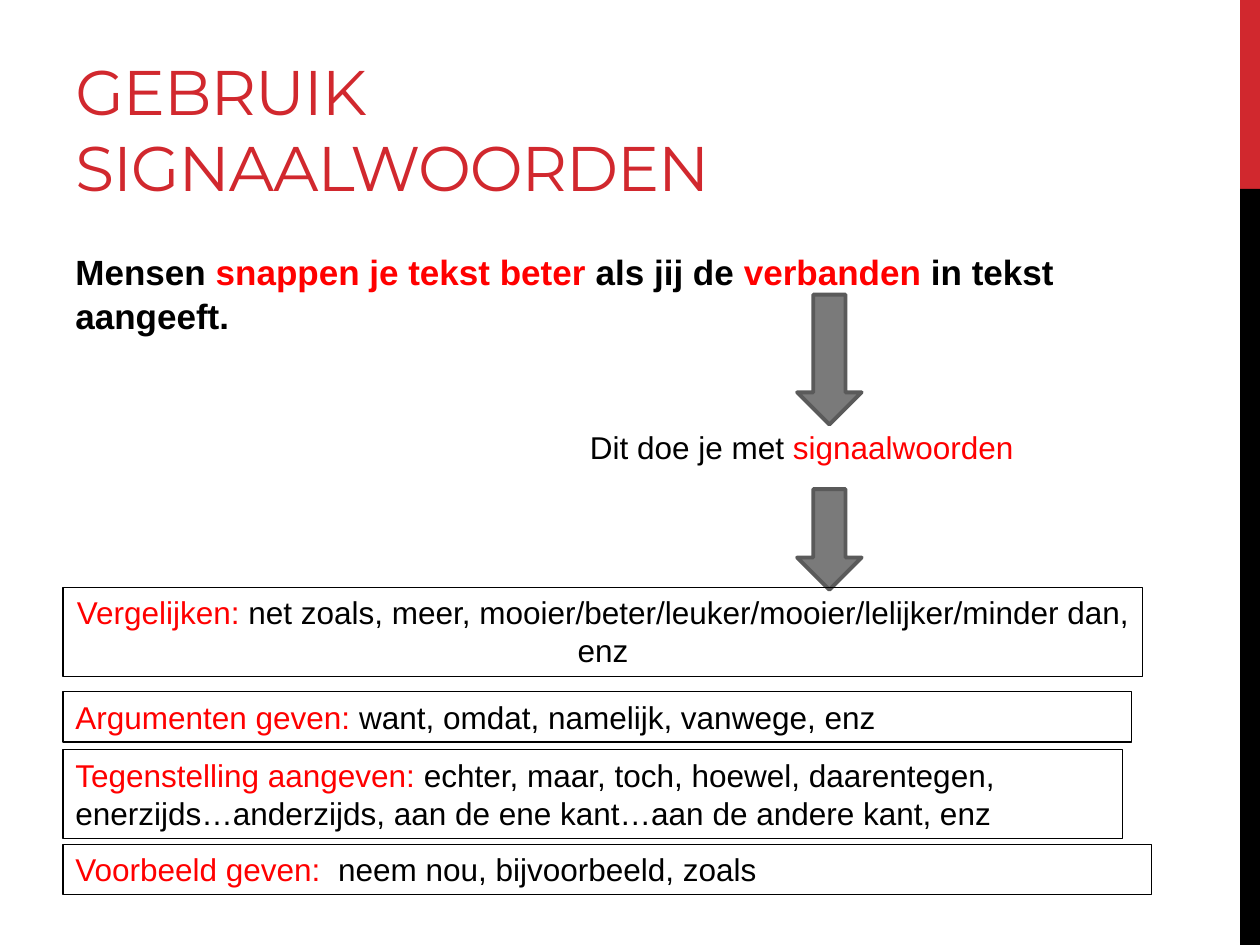
import pptx
import pptx.dml.color
import pptx.enum.shapes
import pptx.enum.text
import pptx.util

Cm = pptx.util.Cm
Pt = pptx.util.Pt
SHAPES = pptx.enum.shapes.MSO_SHAPE
ALIGN = pptx.enum.text.PP_ALIGN
ANCHOR = pptx.enum.text.MSO_ANCHOR

COLORS = {
    "title": "D1282E",
    "text": "000000",
    "accent": "FF0000",
    "arrow": "7A7A7A",
    "arrow_edge": "5A5A5A",
}


def rgb(name):
    return pptx.dml.color.RGBColor.from_string(COLORS[name])


def write(frame, parts, size=18, font="Arial", bold=False, align=ALIGN.LEFT,
          anchor=ANCHOR.TOP, line_spacing=None, tracking=None):
    """Fill a frame with one paragraph of (text, colour name) parts; tracking is in points."""
    frame.word_wrap = True
    frame.vertical_anchor = anchor
    paragraph = frame.paragraphs[0]
    paragraph.alignment = align
    paragraph.line_spacing = line_spacing
    for text, color in parts:
        run = paragraph.add_run()
        run.text = text
        run.font.name = font
        run.font.size = Pt(size)
        run.font.bold = bold
        run.font.color.rgb = rgb(color)
        if tracking is not None:
            run._r.get_or_add_rPr().set("spc", str(round(tracking * 100)))


class SlideBuilder:
    """Holds the slide and draws its elements; all lengths are in centimetres."""

    def __init__(self, slide):
        self.slide = slide

    def shape(self, kind, box, fill=None, edge=None, edge_width=0.75):
        shape = self.slide.shapes.add_shape(kind, *map(Cm, box))
        shape.shadow.inherit = False
        if fill:
            shape.fill.solid()
            shape.fill.fore_color.rgb = rgb(fill)
        else:
            shape.fill.background()
        if edge:
            shape.line.color.rgb = rgb(edge)
            shape.line.width = Pt(edge_width)
        else:
            shape.line.fill.background()
        return shape

    def bar(self, top, height, color):
        self.shape(SHAPES.RECTANGLE, (25, top, 0.4, height), fill=color)

    def arrow(self, top, height):
        self.shape(SHAPES.DOWN_ARROW, (16.07, top, 1.3, height),
                   fill="arrow", edge="arrow_edge", edge_width=2.25)

    def text(self, box, parts, **style):
        textbox = self.slide.shapes.add_textbox(*map(Cm, box))
        write(textbox.text_frame, parts, **style)

    def signal_words(self, top, width, height, relation, words, align=ALIGN.LEFT):
        frame = self.shape(SHAPES.RECTANGLE, (1.27, top, width, height),
                           edge="text").text_frame
        write(frame, [(relation, "accent"), (words, "text")], align=align)


def main():
    presentation = pptx.Presentation()
    presentation.slide_width = Cm(25.4)
    presentation.slide_height = Cm(19.05)
    builder = SlideBuilder(presentation.slides.add_slide(presentation.slide_layouts[6]))

    builder.bar(0, 3.81, "title")
    builder.bar(3.81, 15.24, "text")

    builder.text((1.27, 0.43, 16.08, 3.81), [("GEBRUIK SIGNAALWOORDEN", "title")],
                 size=36, font="Montserrat", anchor=ANCHOR.BOTTOM, tracking=-0.6)
    builder.text((1.27, 4.88, 21.16, 12.14), [
        ("Mensen ", "text"),
        ("snappen je tekst beter ", "accent"),
        ("als jij de ", "text"),
        ("verbanden ", "accent"),
        ("in tekst aangeeft.", "text"),
    ], size=20, bold=True, line_spacing=1.05)

    builder.arrow(5.94, 2.62)
    builder.text((9.98, 8.51, 12.19, 1.02), [
        (" Dit doe je met ", "text"),
        ("signaalwoorden", "accent"),
    ], align=ALIGN.CENTER)
    builder.arrow(9.86, 2.03)

    builder.signal_words(
        11.84, 21.77, 1.8, "Vergelijken: ",
        "net zoals, meer, mooier/beter/leuker/mooier/lelijker/minder dan, enz",
        align=ALIGN.CENTER)
    builder.signal_words(
        13.94, 21.54, 1.02, "Argumenten geven: ",
        "want, omdat, namelijk, vanwege, enz")
    builder.signal_words(
        15.11, 21.36, 1.8, "Tegenstelling aangeven: ",
        "echter, maar, toch, hoewel, daarentegen, enerzijds…anderzijds, "
        "aan de ene kant…aan de andere kant, enz")
    builder.signal_words(
        17.02, 21.95, 1.02, "Voorbeeld geven:  ",
        "neem nou, bijvoorbeeld, zoals")

    presentation.save("out.pptx")


if __name__ == "__main__":
    main()
